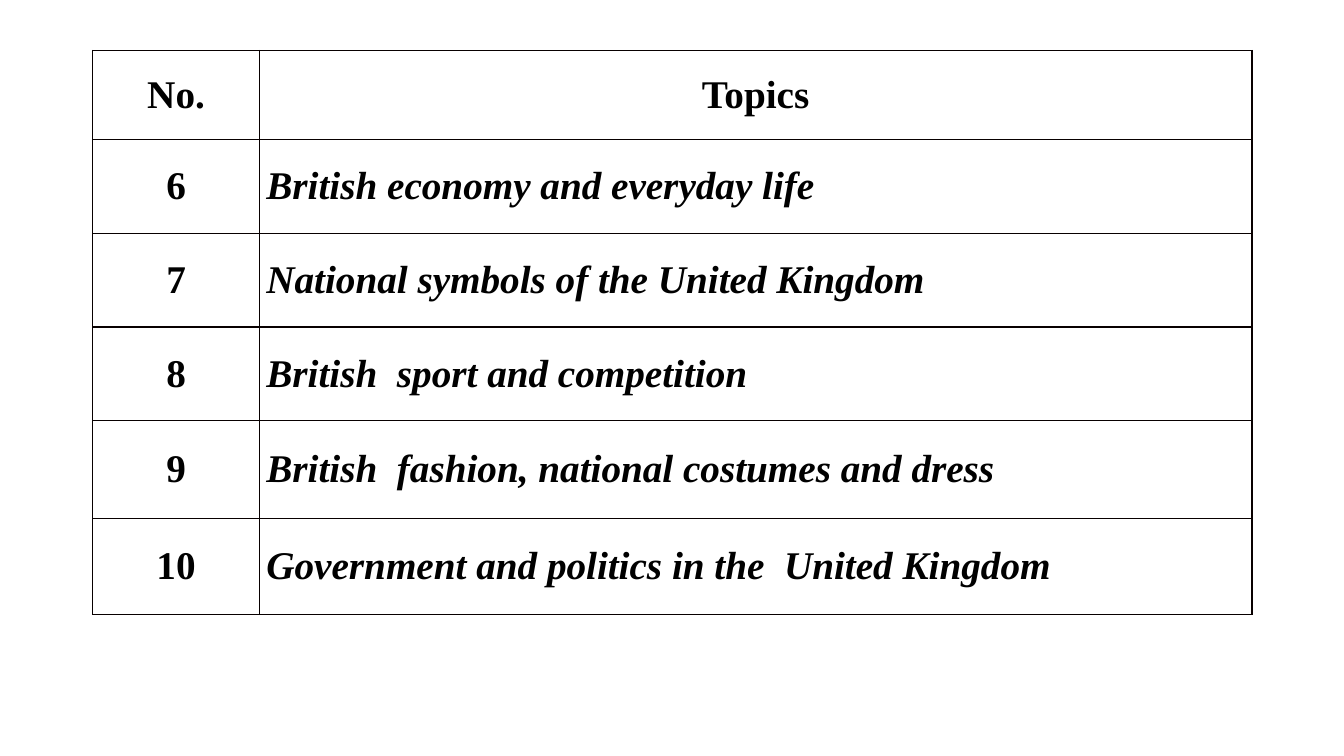
"""Build a slide with a numbered table of topics about Britain."""
import lxml.etree
import pptx
import pptx.dml.color
import pptx.enum.text
import pptx.oxml
import pptx.oxml.ns
import pptx.util

COLORS = {"page": "FFFFFF", "text": "000000", "border": "080000"}
TOPICS = [
    "British economy and everyday life",
    "National symbols of the United Kingdom",
    "British  sport and competition",
    "British  fashion, national costumes and dress",
    "Government and politics in the  United Kingdom",
]
FIRST_NUMBER = 6
COLUMN_WIDTHS = [12.4, 73.85]
ROW_HEIGHTS = [11.8, 12.4, 12.4, 12.4, 12.93, 12.73]


class SlideBuilder:
    """Hold the style and the current slide, measured on a 100 by 100 grid."""

    font_name = "Times New Roman"
    font_size = pptx.util.Pt(28)
    border_width = pptx.util.Pt(1)
    side_margin = pptx.util.Inches(0.07)

    def __init__(self, deck):
        """Start a blank page in the deck."""
        self.column = deck.slide_width / 100
        self.row = deck.slide_height / 100
        self.page = deck.slides.add_slide(deck.slide_layouts[6])
        background = self.page.background.fill
        background.solid()
        background.fore_color.rgb = self.color("page")

    def color(self, name):
        """Return a named colour."""
        return pptx.dml.color.RGBColor.from_string(COLORS[name])

    def table(self, left, top, widths, heights, rows):
        """Add a bordered table with a header row and a number column."""
        frame = self.page.shapes.add_table(
            len(heights), len(widths),
            round(left * self.column), round(top * self.row),
            round(sum(widths) * self.column), round(sum(heights) * self.row),
        )
        table = frame.table
        table.horz_banding = False
        for column, width in zip(table.columns, widths):
            column.width = round(width * self.column)
        for row, height in zip(table.rows, heights):
            row.height = round(height * self.row)
        for row_index, texts in enumerate(rows):
            for column_index, text in enumerate(texts):
                is_topic = row_index > 0 and column_index > 0
                self.cell(table.cell(row_index, column_index), text, is_topic)

    def cell(self, cell, text, is_topic):
        """Fill one table cell, with topics in italics on the left."""
        cell.text = text
        cell.fill.background()
        cell.vertical_anchor = pptx.enum.text.MSO_ANCHOR.MIDDLE
        cell.margin_left = cell.margin_right = self.side_margin
        cell.margin_top = cell.margin_bottom = 0
        para = cell.text_frame.paragraphs[0]
        align = pptx.enum.text.PP_ALIGN
        para.alignment = align.LEFT if is_topic else align.CENTER
        para.font.name = self.font_name
        para.font.size = self.font_size
        para.font.bold = True
        para.font.italic = is_topic
        para.font.color.rgb = self.color("text")
        self.borders(cell)

    def borders(self, cell):
        """Draw a solid line on each side of a cell."""
        qualify = pptx.oxml.ns.qn
        properties = cell._tc.get_or_add_tcPr()
        for position, side in enumerate(["lnL", "lnR", "lnT", "lnB"]):
            line = pptx.oxml.xmlchemy.OxmlElement(f"a:{side}")
            line.set("w", str(int(self.border_width)))
            fill = lxml.etree.SubElement(line, qualify("a:solidFill"))
            color = lxml.etree.SubElement(fill, qualify("a:srgbClr"))
            color.set("val", COLORS["border"])
            properties.insert(position, line)


def main():
    """Build and save the deck."""
    deck = pptx.Presentation()
    deck.slide_width = pptx.util.Inches(13.33)
    deck.slide_height = pptx.util.Inches(7.5)
    numbered = [(str(number), topic) for number, topic in enumerate(TOPICS, FIRST_NUMBER)]
    builder = SlideBuilder(deck)
    builder.table(6.9, 6.67, COLUMN_WIDTHS, ROW_HEIGHTS, [("No.", "Topics")] + numbered)
    deck.save("out.pptx")


if __name__ == "__main__":
    main()
